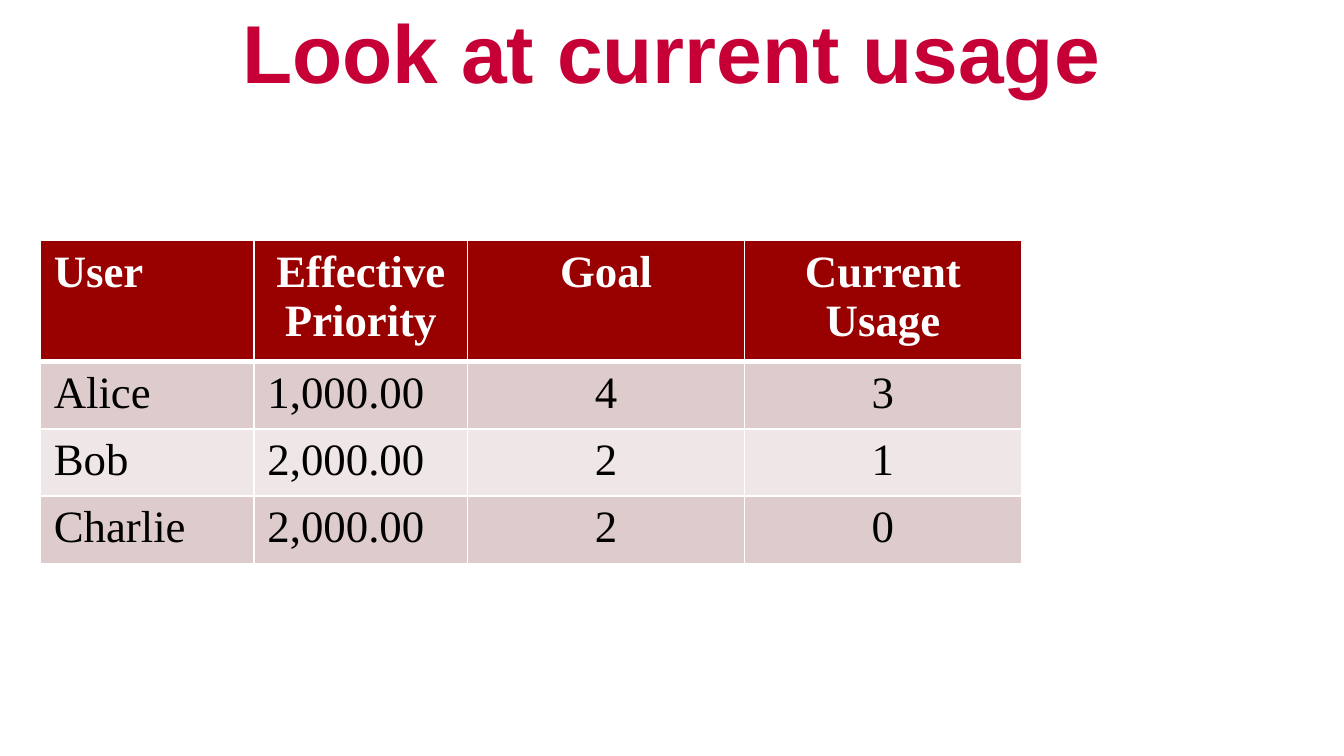
"""Build a slide with a table of current usage per user."""
from lxml import etree
from pptx import Presentation, util as u
from pptx.dml.color import RGBColor
from pptx.enum import text as t
from pptx.oxml import ns

RED = RGBColor(0xC6, 0x00, 0x36)
DARK = RGBColor(0x99, 0x00, 0x00)
ROSE = RGBColor(0xDE, 0xCC, 0xCC)
PALE = RGBColor(0xEF, 0xE7, 0xE7)
WHITE = RGBColor(0xFF, 0xFF, 0xFF)
BLACK = RGBColor(0x00, 0x00, 0x00)

LEFT, MID = t.PP_ALIGN.LEFT, t.PP_ALIGN.CENTER
WIDE = [1.59, 1.59, 2.06, 2.06]
HIGH = 0.41
DATA = [
    ["User", "Effective\nPriority", "Goal", "Current\nUsage"],
    ["Alice", "1,000.00", "4", "3"],
    ["Bob", "2,000.00", "2", "1"],
    ["Charlie", "2,000.00", "2", "0"],
]


def write(frame, words, align, look, color):
    frame.text = words
    for para in frame.paragraphs:
        para.alignment = align
        for run in para.runs:
            for key, val in look.items():
                setattr(run.font, key, val)
            run.font.color.rgb = color


def edge(cell, sides):
    props = cell._tc.get_or_add_tcPr()
    for side, width in sides.items():
        line = etree.SubElement(props, ns.qn(f"a:ln{side}"), w=str(u.Pt(width)))
        fill = etree.SubElement(line, ns.qn("a:solidFill"))
        etree.SubElement(fill, ns.qn("a:srgbClr"), val=str(WHITE))


deck = Presentation()
deck.slide_width = u.Inches(10)
deck.slide_height = deck.slide_width * 9 // 16
slide = deck.slides.add_slide(deck.slide_layouts[6])

title = slide.shapes.add_textbox(0, 0, deck.slide_width, u.Inches(0.75)).text_frame
title.word_wrap = True
title.vertical_anchor = t.MSO_ANCHOR.MIDDLE
write(title, "Look at current usage", MID,
      {"name": "Arial", "size": u.Pt(44), "bold": True}, RED)

table = slide.shapes.add_table(
    len(DATA), len(WIDE), u.Inches(0.3), u.Inches(1.79),
    u.Inches(sum(WIDE)), u.Inches(2.4)).table
for col, width in zip(table.columns, WIDE):
    col.width = u.Inches(width)

for r, line in enumerate(DATA):
    table.rows[r].height = u.Inches(HIGH)
    head = r == 0
    fill = DARK if head else (PALE, ROSE)[r % 2]
    look = {"name": "Times New Roman", "size": u.Pt(24), "bold": head}
    sides = {"L": 1, "R": 1, "T": 3 if r == 1 else 1, "B": 3 if head else 1}
    for c, words in enumerate(line):
        cell = table.cell(r, c)
        edge(cell, sides)
        cell.fill.solid()
        cell.fill.fore_color.rgb = fill
        align = MID if c > 1 or (head and c) else LEFT
        write(cell.text_frame, words, align, look, WHITE if head else BLACK)

deck.save("out.pptx")
